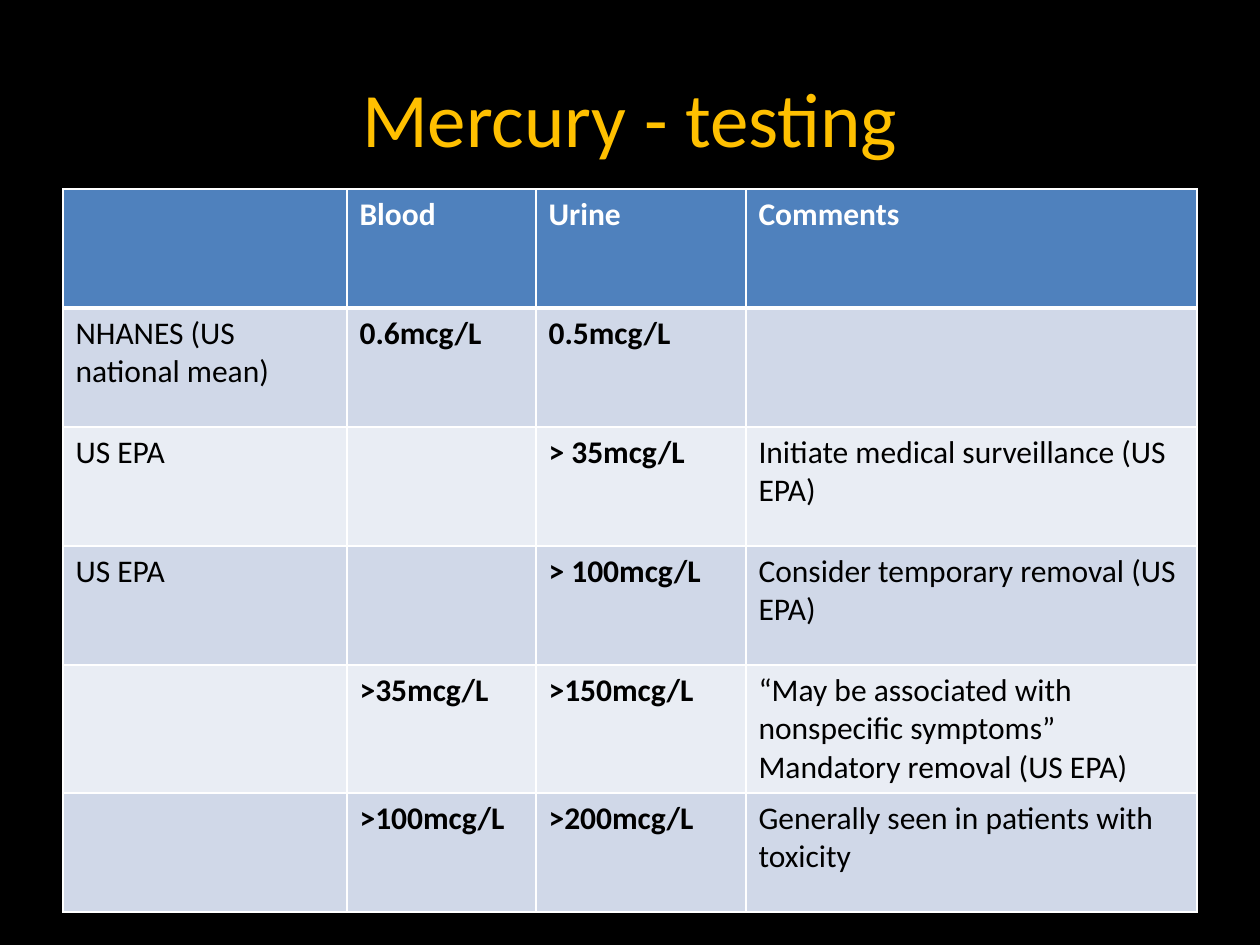
from typing import NamedTuple

from lxml.etree import SubElement
from pptx import Presentation
from pptx.dml.color import RGBColor as Rgb
from pptx.enum.text import MSO_ANCHOR as Anchor, PP_ALIGN as Align
from pptx.oxml.ns import qn
from pptx.util import Pt

SCALE = 914400 / 126  # EMU per px
FONT = "Calibri"
BLACK = Rgb(0x00, 0x00, 0x00)
WHITE = Rgb(0xFF, 0xFF, 0xFF)
GOLD = Rgb(0xFF, 0xC0, 0x00)
BLUE = Rgb(0x4F, 0x81, 0xBD)
BANDS = (Rgb(0xE9, 0xED, 0xF4), Rgb(0xD0, 0xD8, 0xE8))

WIDTHS = (284, 189, 210, 451)
ROW_H = 119


class Level(NamedTuple):
    """One table row: who set the level, the two limits and a remark."""
    source: str
    blood: str
    urine: str
    comment: str


LEVELS = (
    Level("", "Blood", "Urine", "Comments"),
    Level("NHANES (US national mean)", "0.6mcg/L", "0.5mcg/L", ""),
    Level("US EPA", "", "> 35mcg/L", "Initiate medical surveillance (US EPA)"),
    Level("US EPA", "", "> 100mcg/L", "Consider temporary removal (US EPA)"),
    Level("", ">35mcg/L", ">150mcg/L",
          "“May be associated with nonspecific symptoms”\n"
          "Mandatory removal (US EPA)"),
    Level("", ">100mcg/L", ">200mcg/L",
          "Generally seen in patients with toxicity"),
)


def px(n: int) -> int:
    return round(n * SCALE)


def style(frame, size: int, color: Rgb, bold: bool = False) -> None:
    for para in frame.paragraphs:
        for run in para.runs:
            font = run.font
            font.name, font.size, font.bold = FONT, Pt(size), bold
            font.color.rgb = color


def add_edge(cell, side: str, width: int) -> None:
    """Draw one white cell border; side is L, R, T or B."""
    props = cell._tc.get_or_add_tcPr()
    line = SubElement(props, qn(f"a:ln{side}"), w=str(Pt(width)))
    fill = SubElement(line, qn("a:solidFill"))
    SubElement(fill, qn("a:srgbClr"), val=str(WHITE))


def fill_cell(cell, text: str, row: int, col: int) -> None:
    head = row == 0
    for side in "LRTB":
        thick = (row, side) in ((0, "B"), (1, "T"))
        add_edge(cell, side, 3 if thick else 1)
    cell.fill.solid()
    cell.fill.fore_color.rgb = BLUE if head else BANDS[row % 2]
    cell.text_frame.text = text
    style(cell.text_frame, 18, WHITE if head else BLACK,
          head or col in (1, 2))


def add_title(slide, text: str) -> None:
    title = slide.shapes.title
    title.left, title.top = px(63), px(38)
    title.width, title.height = px(1134), px(157)
    frame = title.text_frame
    frame.text = text
    frame.vertical_anchor = Anchor.MIDDLE
    frame.paragraphs[0].alignment = Align.CENTER
    style(frame, 44, GOLD)


def add_levels(slide) -> None:
    table = slide.shapes.add_table(
        len(LEVELS), len(WIDTHS), px(63), px(189),
        px(sum(WIDTHS)), px(ROW_H * len(LEVELS))).table
    for col, width in zip(table.columns, WIDTHS):
        col.width = px(width)
    for r, level in enumerate(LEVELS):
        table.rows[r].height = px(ROW_H)
        for c, text in enumerate(level):
            fill_cell(table.cell(r, c), text, r, c)


def main() -> None:
    deck = Presentation()
    deck.slide_width, deck.slide_height = px(1260), px(945)
    slide = deck.slides.add_slide(deck.slide_layouts[5])
    back = slide.background.fill
    back.solid()
    back.fore_color.rgb = BLACK
    add_title(slide, "Mercury - testing")
    add_levels(slide)
    deck.save("out.pptx")


if __name__ == "__main__":
    main()
